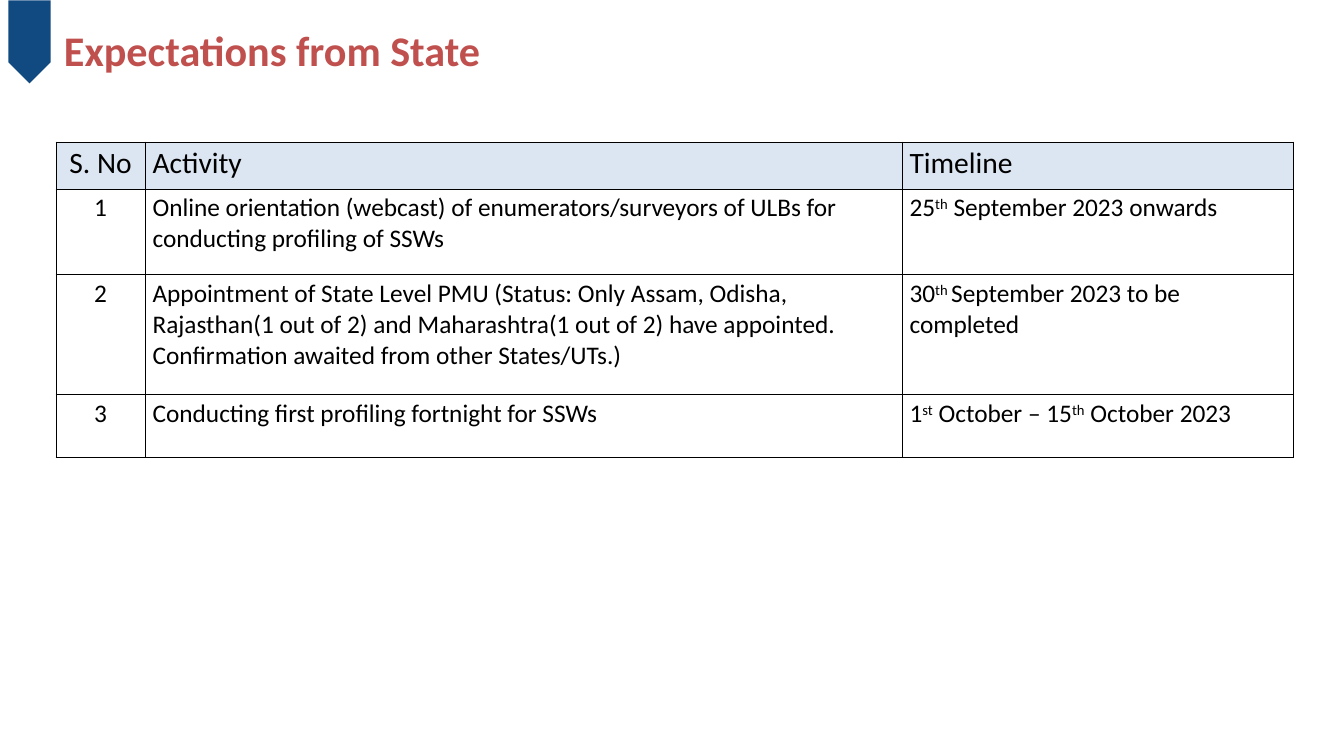
import pptx
import pptx.util
import pptx.dml.color
import pptx.enum.shapes
import pptx.enum.text
import pptx.oxml
import pptx.oxml.ns

RED = pptx.dml.color.RGBColor(0xC0, 0x50, 0x4D)
NAVY = pptx.dml.color.RGBColor(0x11, 0x4A, 0x81)
PALE_BLUE = pptx.dml.color.RGBColor(0xDC, 0xE6, 0xF2)
BLACK = pptx.dml.color.RGBColor(0, 0, 0)
FONT = "Calibri"
PX = 914400 / 75.9

COLUMNS = [89, 757, 391]
ROW_HEIGHTS = [47, 86, 120, 63]
# Text between ^ marks is superscript.
ROWS = [
    ["S. No", "Activity", "Timeline"],
    ["1",
     "Online orientation (webcast) of enumerators/surveyors of ULBs for "
     "conducting profiling of SSWs",
     "25^th^ September 2023 onwards"],
    ["2",
     "Appointment of State Level PMU (Status: Only Assam, Odisha, "
     "Rajasthan(1 out of 2) and Maharashtra(1 out of 2) have appointed. "
     "Confirmation awaited from other States/UTs.)",
     "30^th ^September 2023 to be completed"],
    ["3",
     "Conducting first profiling fortnight for SSWs",
     "1^st^ October – 15^th^ October 2023"],
]


def px(*lengths):
    """Turn pixel lengths into EMU."""
    return [pptx.util.Emu(round(n * PX)) for n in lengths]


def add_run(p, text, size, color, bold=False):
    r = p.add_run()
    r.text = text
    r.font.name = FONT
    r.font.size = pptx.util.Pt(size)
    r.font.bold = bold
    r.font.color.rgb = color
    return r


prs = pptx.Presentation()
prs.slide_width, prs.slide_height = px(1344, 756)
s = prs.slides.add_slide(prs.slide_layouts[6])

# Title
title = s.shapes.add_textbox(*px(56, 17, 1201, 66))
tf = title.text_frame
tf.word_wrap = True
tf.vertical_anchor = pptx.enum.text.MSO_ANCHOR.MIDDLE
tf.margin_left, tf.margin_top, tf.margin_right, tf.margin_bottom = px(8, 5, 8, 5)
add_run(tf.paragraphs[0], "Expectations from State", 40, RED, bold=True)

# Ribbon pointing down from the top edge
ribbon = s.shapes.add_shape(pptx.enum.shapes.MSO_SHAPE.PENTAGON, *px(-12, 21, 83, 42))
ribbon.rotation = 90
ribbon.adjustments[0] = 0.5
ribbon.shadow.inherit = False
ribbon.fill.solid()
ribbon.fill.fore_color.rgb = NAVY
ribbon.line.fill.background()

# Activity table
frame = s.shapes.add_table(len(ROWS), len(COLUMNS),
                           *px(56, 142, sum(COLUMNS), sum(ROW_HEIGHTS)))
table = frame.table
table.first_row = False
table.horz_banding = False
for column, width in zip(table.columns, px(*COLUMNS)):
    column.width = width
for row, height in zip(table.rows, px(*ROW_HEIGHTS)):
    row.height = height

for i, row in enumerate(ROWS):
    for j, text in enumerate(row):
        cell = table.cell(i, j)
        tcPr = cell._tc.get_or_add_tcPr()
        for side in ("lnL", "lnR", "lnT", "lnB"):
            tcPr.append(pptx.oxml.parse_xml(
                f'<a:{side} {pptx.oxml.ns.nsdecls("a")} w="12700"><a:solidFill>'
                f'<a:srgbClr val="{BLACK}"/></a:solidFill></a:{side}>'))
        if i == 0:
            cell.fill.solid()
            cell.fill.fore_color.rgb = PALE_BLUE
        else:
            cell.fill.background()
        p = cell.text_frame.paragraphs[0]
        if j == 0:
            p.alignment = pptx.enum.text.PP_ALIGN.CENTER
        for k, part in enumerate(text.split("^")):
            r = add_run(p, part, 28 if i == 0 else 24, BLACK)
            if k % 2:
                r._r.get_or_add_rPr().set("baseline", "30000")

prs.save("out.pptx")
